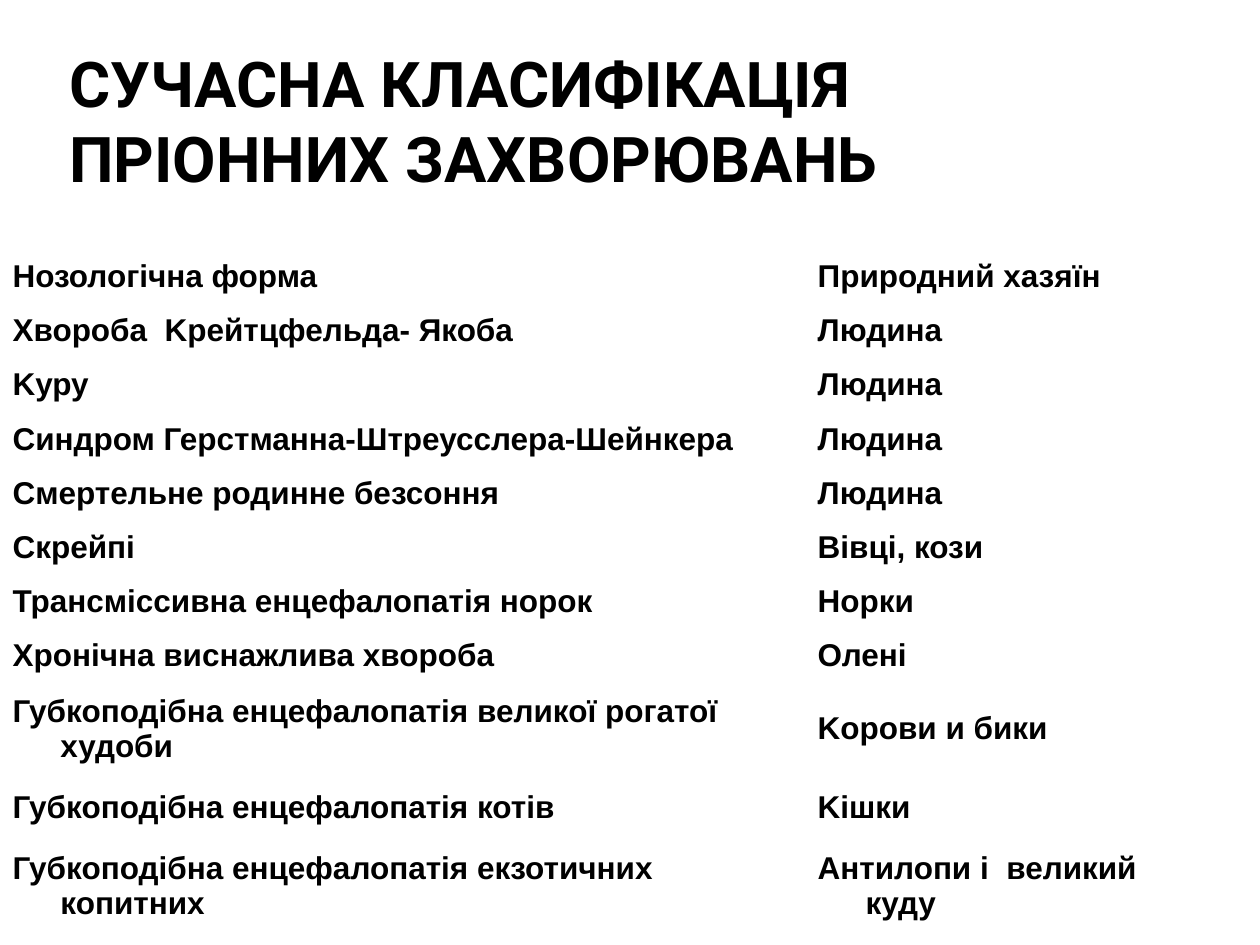
from pptx import Presentation
from pptx.dml.color import RGBColor
from pptx.enum.text import MSO_ANCHOR, MSO_AUTO_SIZE, PP_ALIGN
from pptx.util import Inches, Pt

BLACK = RGBColor(0, 0, 0)
TITLE = "СУЧАСНА КЛАСИФІКАЦІЯ ПРІОННИХ ЗАХВОРЮВАНЬ"
DISEASES = [
    ("Нозологічна форма", "Природний хазяїн"),
    ("Хвороба  Kрейтцфельда- Якоба", "Людина"),
    ("Kуру", "Людина"),
    ("Синдром Герстманна-Штреусслера-Шейнкера", "Людина"),
    ("Смертельне родинне безсоння", "Людина"),
    ("Скрейпі", "Вівці, кози"),
    ("Трансміссивна енцефалопатія норок", "Норки"),
    ("Хронічна виснажлива хвороба", "Олені"),
    ("Губкоподібна енцефалопатія великої рогатої худоби", "Kорови и бики"),
    ("Губкоподібна енцефалопатія котів", "Kішки"),
    ("Губкоподібна енцефалопатія екзотичних копитних", "Антилопи і  великий куду"),
]
COLUMN_WIDTHS = (6.39, 3.11)
ROW_HEIGHTS = [0.43] * 9 + [0.73, 0.52, 0.73]
TABLE_TOP = 1.55
HANGING_INDENT = Inches(0.38)
TITLE_FONT = {"name": "Roboto", "size": Pt(36), "bold": True}
CELL_FONT = {"name": "Arial", "size": Pt(18), "bold": True}


def set_values(target, values):
    for name, value in values.items():
        setattr(target, name, value)


def write(frame, text, font):
    para = frame.paragraphs[0]
    para.alignment = PP_ALIGN.LEFT
    span = para.add_run()
    span.text = text
    set_values(span.font, font)
    span.font.color.rgb = BLACK
    return para


def add_title(page):
    title = page.shapes.title
    set_values(title, {"left": Inches(0.5), "top": Inches(0.36),
                       "width": Inches(8.44), "height": Inches(1.19)})
    set_values(title.text_frame, {
        "word_wrap": True, "auto_size": MSO_AUTO_SIZE.NONE,
        "vertical_anchor": MSO_ANCHOR.BOTTOM,
        "margin_left": Inches(0.05), "margin_right": Inches(0.05),
        "margin_top": 0, "margin_bottom": 0})
    write(title.text_frame, TITLE, TITLE_FONT)


def add_disease_table(page):
    table = page.shapes.add_table(
        len(ROW_HEIGHTS), len(COLUMN_WIDTHS), 0, Inches(TABLE_TOP),
        Inches(sum(COLUMN_WIDTHS)), Inches(sum(ROW_HEIGHTS))).table
    set_values(table, {"first_row": False, "horz_banding": False})
    for column, width in zip(table.columns, COLUMN_WIDTHS):
        column.width = Inches(width)
    for row, height in zip(table.rows, ROW_HEIGHTS):
        row.height = Inches(height)
    for cell in table.iter_cells():
        cell.fill.background()
    table.cell(0, 0).merge(table.cell(0, 1))
    for row_index, texts in enumerate(DISEASES, start=1):
        for column_index, text in enumerate(texts):
            cell = table.cell(row_index, column_index)
            cell.vertical_anchor = MSO_ANCHOR.MIDDLE
            para = write(cell.text_frame, text, CELL_FONT)
            properties = para._p.get_or_add_pPr()
            properties.set("marL", str(HANGING_INDENT))
            properties.set("indent", str(-HANGING_INDENT))


def main():
    deck = Presentation()
    set_values(deck, {"slide_width": Inches(10), "slide_height": Inches(7.5)})
    page = deck.slides.add_slide(deck.slide_layouts.get_by_name("Title Only"))
    add_title(page)
    add_disease_table(page)
    deck.save("out.pptx")


if __name__ == "__main__":
    main()
